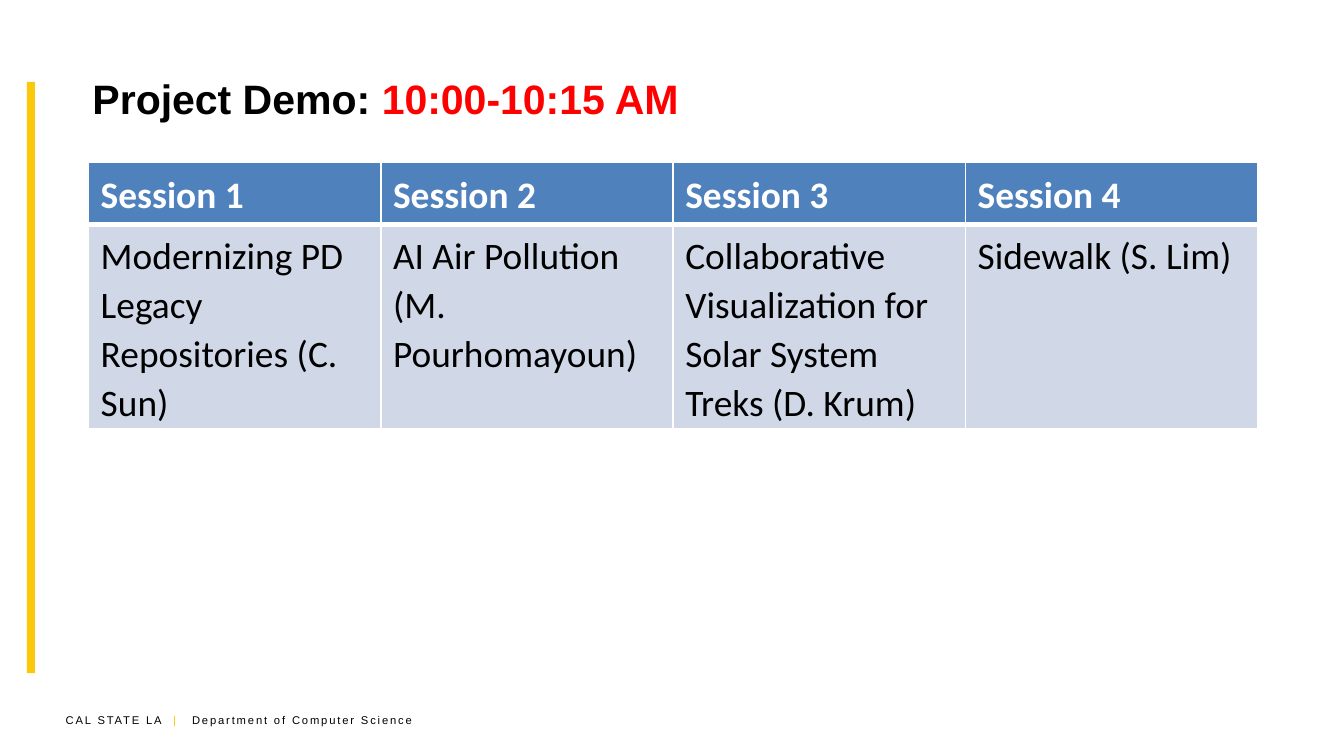
from lxml import etree
from pptx import Presentation
from pptx import util as u
from pptx.dml.color import RGBColor
from pptx.enum import shapes, text
from pptx.oxml import ns

COLORS = {
    "gold": "FCC90A",
    "black": "000000",
    "red": "FF0000",
    "white": "FFFFFF",
    "header": "4F81BD",
    "body": "D0D8E8",
}

SESSIONS = [
    ("Session 1", "Modernizing PD Legacy Repositories (C. Sun)"),
    ("Session 2", "AI Air Pollution (M. Pourhomayoun)"),
    ("Session 3", "Collaborative Visualization for Solar System Treks (D. Krum)"),
    ("Session 4", "Sidewalk (S. Lim)"),
]


def color(name):
    return RGBColor.from_string(COLORS[name])


def write_text(frame, spans, size, font="Arial", bold=False, tracking=0,
               line_spacing=None, space_after=None, tabs=()):
    frame.word_wrap = True
    para = frame.paragraphs[0]
    if line_spacing:
        para.line_spacing = line_spacing
    if space_after:
        para.space_after = u.Pt(space_after)
    if tabs:
        stops = etree.SubElement(para._p.get_or_add_pPr(), ns.qn("a:tabLst"))
        for position in tabs:
            etree.SubElement(stops, ns.qn("a:tab"), pos=str(u.Inches(position)), algn="l")
    for content, shade in spans:
        span = para.add_run()
        span.text = content
        span.font.name = font
        span.font.size = u.Pt(size)
        span.font.bold = bold
        span.font.color.rgb = color(shade)
        if tracking:
            span._r.get_or_add_rPr().set("spc", str(tracking * 100))


def add_text_box(page, left, top, width, height, spans, anchor=text.MSO_ANCHOR.TOP, **style):
    box = page.shapes.add_textbox(*map(u.Inches, (left, top, width, height)))
    box.text_frame.vertical_anchor = anchor
    write_text(box.text_frame, spans, **style)


def add_bar(page, left, top, width, height):
    bar = page.shapes.add_shape(
        shapes.MSO_SHAPE.RECTANGLE, *map(u.Inches, (left, top, width, height)))
    bar.shadow.inherit = False
    bar.fill.solid()
    bar.fill.fore_color.rgb = color("gold")
    bar.line.fill.background()


def set_borders(cell, **widths):
    properties = cell._tc.get_or_add_tcPr()
    for index, (side, width) in enumerate(widths.items()):
        line = etree.Element(ns.qn(f"a:ln{side}"), w=str(u.Pt(width)))
        fill = etree.SubElement(line, ns.qn("a:solidFill"))
        etree.SubElement(fill, ns.qn("a:srgbClr"), val=COLORS["white"])
        properties.insert(index, line)


def fill_cell(cell, content, is_header):
    cell.margin_left = cell.margin_right = u.Inches(0.09)
    cell.margin_top = cell.margin_bottom = u.Inches(0.05)
    cell.fill.solid()
    cell.fill.fore_color.rgb = color("header" if is_header else "body")
    write_text(cell.text_frame, [(content, "white" if is_header else "black")],
               size=20, font="Calibri", bold=is_header, line_spacing=1.07, space_after=8)
    set_borders(cell, L=1, R=1, T=1 if is_header else 3, B=3 if is_header else 1)


def add_session_table(page, left, top, width, height):
    frame = page.shapes.add_table(
        2, len(SESSIONS), *map(u.Inches, (left, top, width, height)))
    table = frame.table
    for row, row_height in zip(table.rows, (0.37, 0.45)):
        row.height = u.Inches(row_height)
    for column, session in enumerate(SESSIONS):
        for row, content in enumerate(session):
            fill_cell(table.cell(row, column), content, is_header=row == 0)
    frame.height = u.Inches(height)


def main():
    deck = Presentation()
    deck.slide_width = u.Inches(10)
    deck.slide_height = deck.slide_width * 9 // 16
    page = deck.slides.add_slide(deck.slide_layouts[6])
    add_text_box(page, 0.39, 5.26, 2.92, 0.2,
                 [("CAL STATE LA\t", "black"), ("|\t", "gold"),
                  ("Department of Computer Science", "black")],
                 size=6, tracking=1, tabs=(0.8, 0.94))
    add_bar(page, 0.2, 0.61, 0.06, 4.4)
    add_text_box(page, 0.59, 0.26, 8.9, 0.94,
                 [("Project Demo: ", "black"), ("10:00-10:15 AM", "red")],
                 anchor=text.MSO_ANCHOR.MIDDLE, size=22, bold=True)
    add_session_table(page, 0.66, 1.21, 8.7, 1.97)
    deck.save("out.pptx")


if __name__ == "__main__":
    main()
